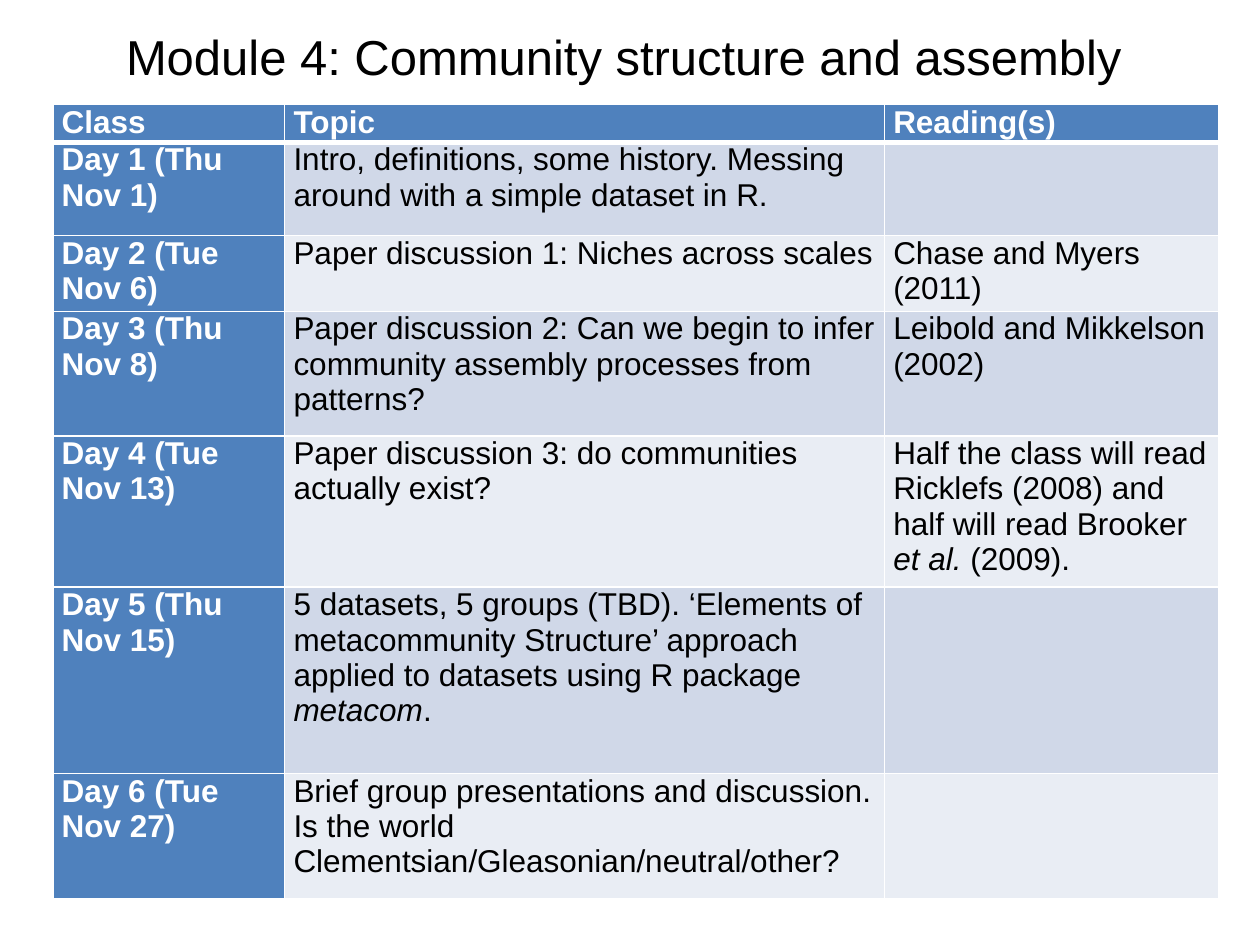
import dataclasses
import typing

import pptx
import pptx.dml.color
import pptx.enum.text
import pptx.oxml
import pptx.oxml.ns
import pptx.util

Inches = pptx.util.Inches


@dataclasses.dataclass(frozen=True)
class Theme:
    font: str = "Arial"
    title: int = 28
    body: int = 18
    black: str = "000000"
    white: str = "FFFFFF"
    blue: str = "4F81BD"
    bands: tuple[str, str] = ("D0D8E8", "E9EDF4")
    rule: int = 1
    thick: int = 3


@dataclasses.dataclass(frozen=True)
class Day:
    name: str
    topic: str
    high: float
    reading: str = ""


THEME = Theme()
WIDTHS = (1.84, 4.76, 2.65)
HEAD = Day("Class", "Topic", 0.29, "Reading(s)")
DAYS = (
    Day("Day 1 (Thu Nov 1)",
        "Intro, definitions, some history. Messing around with a simple dataset in R.",
        0.74),
    Day("Day 2 (Tue Nov 6)", "Paper discussion 1: Niches across scales",
        0.6, "Chase and Myers (2011)"),
    Day("Day 3 (Thu Nov 8)",
        "Paper discussion 2: Can we begin to infer community assembly processes "
        "from patterns?", 0.99, "Leibold and Mikkelson (2002)"),
    Day("Day 4 (Tue Nov 13)", "Paper discussion 3: do communities actually exist?",
        1.2, "Half the class will read Ricklefs (2008) and half will read Brooker "
        "*et al. *(2009)."),
    Day("Day 5 (Thu Nov 15)",
        "5 datasets, 5 groups (TBD). ‘Elements of metacommunity Structure’ approach "
        "applied to datasets using R package *metacom*.", 1.48),
    Day("Day 6 (Tue Nov 27)",
        "Brief group presentations and discussion. Is the world "
        "Clementsian/Gleasonian/neutral/other?", 0.99),
)


def write(frame: typing.Any, text: str, *, size: int = THEME.body,
          color: str = THEME.black, bold: bool = False) -> None:
    """Fill a text frame; words between asterisks become italic."""
    line = frame.paragraphs[0]
    line.alignment = pptx.enum.text.PP_ALIGN.LEFT
    line.font.size = pptx.util.Pt(size)
    for index, part in enumerate(text.split("*")):
        if not part:
            continue
        run = line.add_run()
        run.text = part
        font = run.font
        font.name, font.size = THEME.font, pptx.util.Pt(size)
        font.bold, font.italic = bold, index % 2 == 1
        font.color.rgb = pptx.dml.color.RGBColor.from_string(color)


def edge(cell: typing.Any, side: str, points: int) -> None:
    """Add one white cell border; borders must precede the cell's fill."""
    cell._tc.get_or_add_tcPr().append(pptx.oxml.parse_xml(
        f'<a:ln{side} {pptx.oxml.ns.nsdecls("a")} w="{pptx.util.Pt(points)}">'
        f'<a:solidFill><a:srgbClr val="{THEME.white}"/></a:solidFill></a:ln{side}>'))


def draw_cell(cell: typing.Any, text: str, fill: str, *, key: bool,
              top: int, base: int) -> None:
    cell.margin_left = cell.margin_right = Inches(0.07)
    cell.margin_top = cell.margin_bottom = 0
    sides = {"L": THEME.rule, "R": THEME.rule, "T": top, "B": base}
    for side, points in sides.items():
        edge(cell, side, points)
    cell.fill.solid()
    cell.fill.fore_color.rgb = pptx.dml.color.RGBColor.from_string(fill)
    write(cell.text_frame, text, bold=key,
          color=THEME.white if key else THEME.black)


def draw_plan(slide: typing.Any) -> None:
    days = (HEAD, *DAYS)
    grid = slide.shapes.add_table(
        len(days), len(WIDTHS), Inches(0.42), Inches(0.83),
        Inches(sum(WIDTHS)), Inches(sum(day.high for day in days))).table
    for column, width in zip(grid.columns, WIDTHS):
        column.width = Inches(width)
    for row, day in enumerate(days):
        grid.rows[row].height = Inches(day.high)
        for col, text in enumerate((day.name, day.topic, day.reading)):
            key = row == 0 or col == 0
            fill = THEME.blue if key else THEME.bands[(row - 1) % 2]
            draw_cell(grid.cell(row, col), text, fill, key=key,
                      top=THEME.thick if row == 1 else THEME.rule,
                      base=THEME.thick if row == 0 else THEME.rule)


def draw_title(slide: typing.Any, text: str) -> None:
    title = slide.shapes.title
    title.left, title.top = Inches(0.9), Inches(0.16)
    title.width, title.height = Inches(8.2), Inches(0.57)
    frame = title.text_frame
    frame.word_wrap = False
    frame.auto_size = pptx.enum.text.MSO_AUTO_SIZE.SHAPE_TO_FIT_TEXT
    frame.vertical_anchor = pptx.enum.text.MSO_ANCHOR.TOP
    write(frame, text, size=THEME.title)


def main() -> None:
    deck = pptx.Presentation()
    deck.slide_width, deck.slide_height = Inches(10), Inches(7.5)
    slide = deck.slides.add_slide(deck.slide_layouts[5])
    draw_title(slide, "Module 4: Community structure and assembly")
    draw_plan(slide)
    deck.save("out.pptx")


if __name__ == "__main__":
    main()
